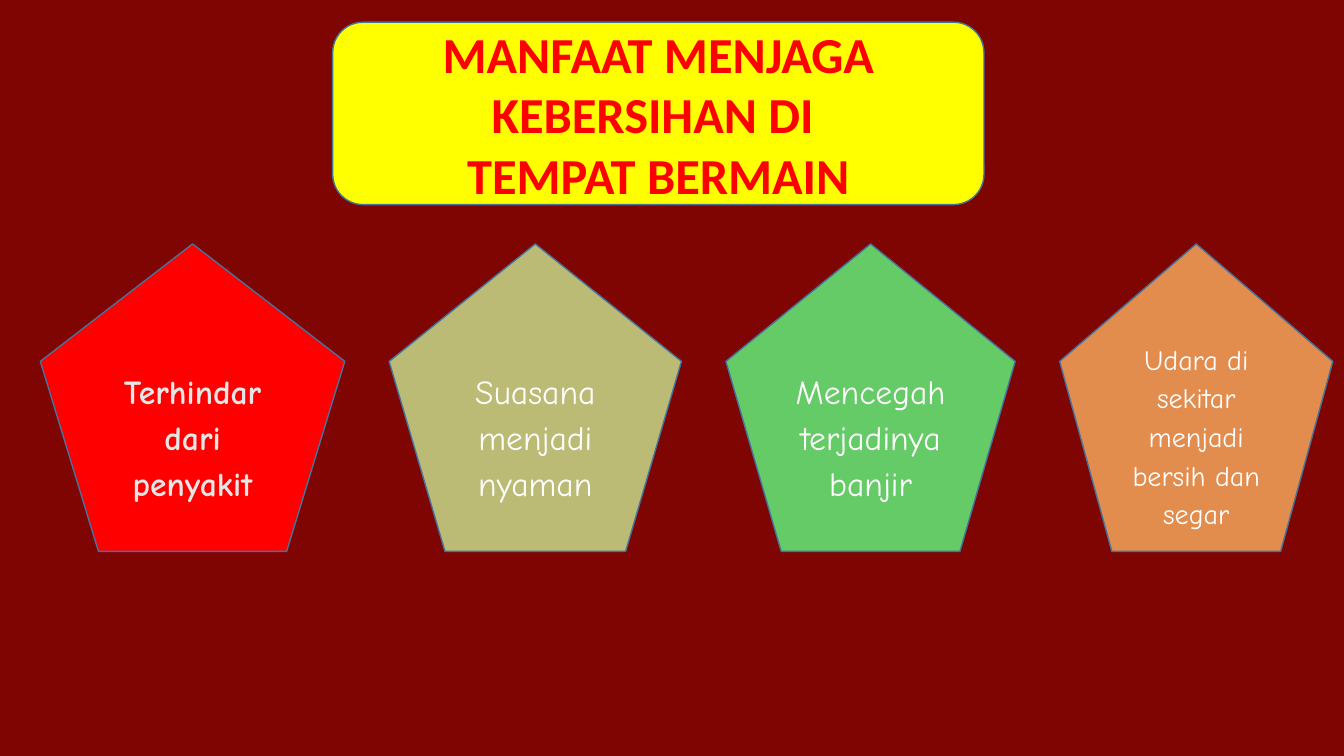
from pptx import Presentation
from pptx.dml.color import RGBColor
from pptx.enum.shapes import MSO_SHAPE as Kind
from pptx.enum.text import MSO_ANCHOR as Anchor, MSO_AUTO_SIZE as Fit, PP_ALIGN as Align
from pptx.util import Inches, Pt

MAROON = RGBColor(0x7E, 0x05, 0x02)
RED = RGBColor(0xFF, 0x00, 0x00)
KHAKI = RGBColor(0xBB, 0xBB, 0x75)
GREEN = RGBColor(0x65, 0xCB, 0x67)
ORANGE = RGBColor(0xE2, 0x8D, 0x4E)
YELLOW = RGBColor(0xFF, 0xFF, 0x00)
BLUE = RGBColor(0x43, 0x73, 0x9E)
WHITE = RGBColor(0xFF, 0xFF, 0xFF)
GRAY = RGBColor(0xE7, 0xE6, 0xE6)

TITLE = ["MANFAAT MENJAGA KEBERSIHAN DI ", "TEMPAT BERMAIN"]
BANNER = (3.3, 0.22, 6.46, 1.81)
TOP, HEIGHT = 2.42, 3.05
BENEFITS = [
    ("Terhindar dari penyakit", 0.4, 3.02, RED, GRAY, 24, True),
    ("Suasana menjadi nyaman", 3.86, 2.9, KHAKI, WHITE, 24, False),
    ("Mencegah terjadinya banjir", 7.2, 2.87, GREEN, WHITE, 24, False),
    ("Udara di sekitar menjadi bersih dan segar", 10.51, 2.71, ORANGE, WHITE, 20, False),
]


def add_shape(slide, kind, box, fill):
    shape = slide.shapes.add_shape(kind, *map(Inches, box))
    shape.shadow.inherit = False
    shape.fill.solid()
    shape.fill.fore_color.rgb = fill
    shape.line.color.rgb = BLUE
    shape.line.width = Pt(1)
    return shape


def set_text(frame, lines, face, size, color, bold, space):
    frame.text = "\n".join(lines)
    frame.word_wrap = True
    frame.auto_size = Fit.NONE
    frame.vertical_anchor = Anchor.MIDDLE
    for para in frame.paragraphs:
        para.alignment = Align.CENTER
        para.line_spacing = space
        font = para.font
        font.name, font.size, font.bold = face, Pt(size), bold
        font.color.rgb = color


def main():
    deck = Presentation()
    deck.slide_width, deck.slide_height = Inches(13.33), Inches(7.5)
    slide = deck.slides.add_slide(deck.slide_layouts[5])
    back = slide.background.fill
    back.solid()
    back.fore_color.rgb = MAROON

    for text, left, width, fill, color, size, bold in BENEFITS:
        box = (left, TOP, width, HEIGHT)
        shape = add_shape(slide, Kind.REGULAR_PENTAGON, box, fill)
        set_text(shape.text_frame, [text], "Comic Neue", size, color, bold, 1.15)

    banner = add_shape(slide, Kind.FLOWCHART_ALTERNATE_PROCESS, BANNER, YELLOW)
    title = slide.shapes.title
    title.left, title.top, title.width, title.height = map(Inches, BANNER)
    set_text(title.text_frame, TITLE, "Calibri", 36, RED, True, 1.0)
    banner._element.addnext(title._element)

    deck.save("out.pptx")


if __name__ == "__main__":
    main()
